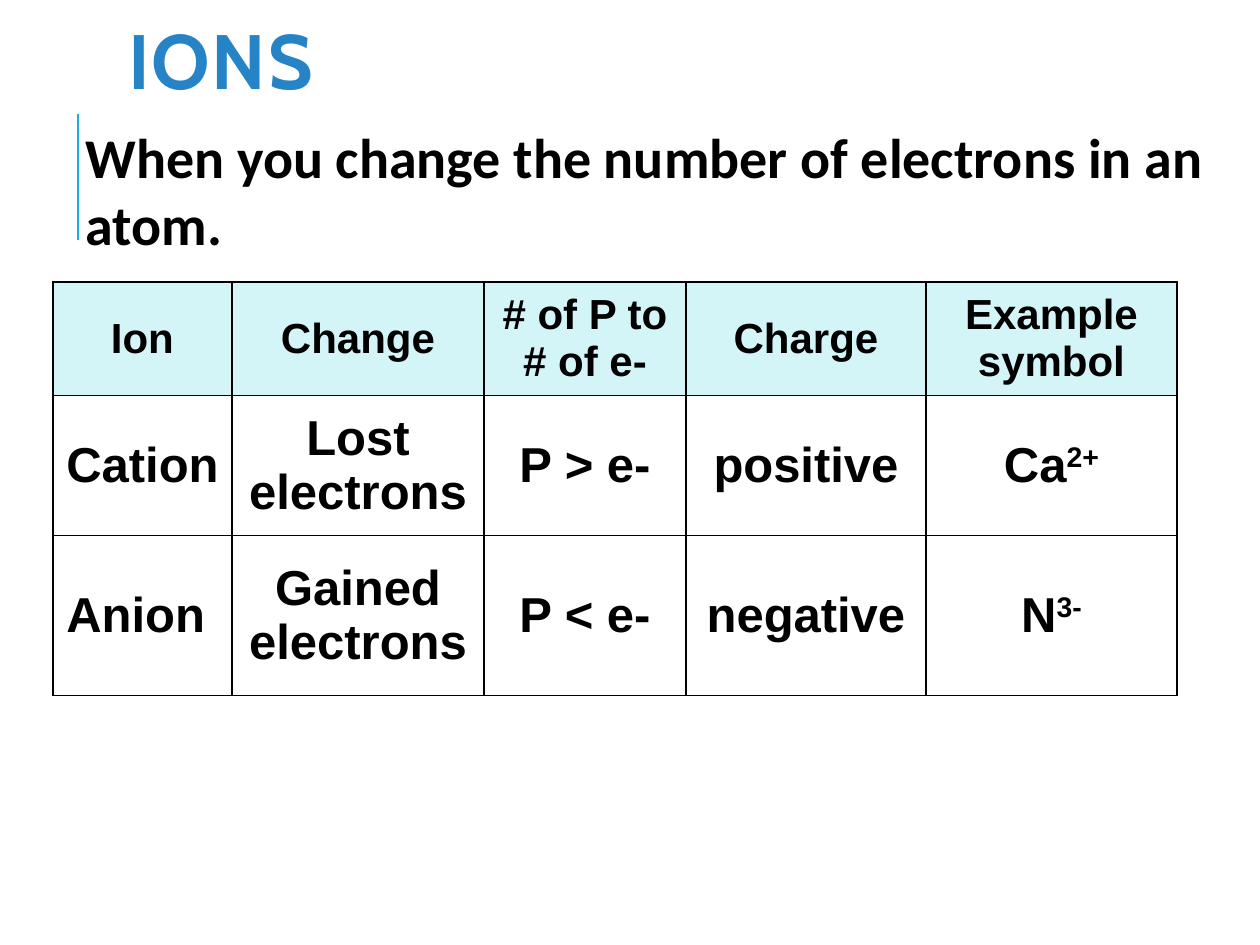
from lxml.etree import SubElement
from pptx import Presentation
from pptx.dml.color import RGBColor
from pptx.enum.shapes import MSO_CONNECTOR as Connector
from pptx.enum.text import MSO_ANCHOR as Anchor, PP_ALIGN as Align
from pptx.oxml.ns import qn
from pptx.util import Emu, Pt

PX = 914400 / 126
BLACK = RGBColor(0x00, 0x00, 0x00)
WHITE = RGBColor(0xFF, 0xFF, 0xFF)
TITLE_BLUE = RGBColor(0x26, 0x83, 0xC6)
ACCENT_BLUE = RGBColor(0x1C, 0xAD, 0xE4)
HEADER_FILL = RGBColor(0xD4, 0xF5, 0xF7)

COLUMN_WIDTHS = [179, 252, 202, 240, 251]
ROW_HEIGHTS = [113, 140, 160]
# A cell is its text, or its text with a superscript
ION_ROWS = [
    ["Ion", "Change", "# of P to # of e-", "Charge", "Example symbol"],
    ["Cation", "Lost electrons", "P > e-", "positive", ("Ca", "2+")],
    ["Anion ", "Gained electrons", "P < e-", "negative", ("N", "3-")],
]


def px(length):
    return Emu(round(length * PX))


class SlideBuilder:
    table_font = "Arial"
    header_size = 24
    body_size = 28

    def __init__(self, slide):
        self.slide = slide

    def style_run(self, run, font, size, color=BLACK):
        run.font.name = font
        run.font.size = Pt(size)
        run.font.bold = True
        run.font.color.rgb = color

    def text(self, box, words, font, size, color=BLACK,
             anchor=Anchor.TOP, line_spacing=1.0):
        frame = self.slide.shapes.add_textbox(*map(px, box)).text_frame
        frame.word_wrap = True
        frame.vertical_anchor = anchor
        frame.text = words
        paragraph = frame.paragraphs[0]
        paragraph.line_spacing = line_spacing
        self.style_run(paragraph.runs[0], font, size, color)
        return paragraph.runs[0]

    def line(self, start, end, color, width):
        rule = self.slide.shapes.add_connector(
            Connector.STRAIGHT, *map(px, start + end))
        rule.line.color.rgb = color
        rule.line.width = Pt(width)
        SubElement(rule._element.spPr, qn("a:effectLst"))

    def cell_borders(self, cell):
        properties = cell._tc.get_or_add_tcPr()
        for position, side in enumerate(("lnL", "lnR", "lnT", "lnB")):
            border = SubElement(properties, qn(f"a:{side}"), w=str(Pt(1)))
            fill = SubElement(border, qn("a:solidFill"))
            SubElement(fill, qn("a:srgbClr"), val=str(BLACK))
            properties.insert(position, border)

    def cell(self, cell, content, size, fill):
        base, superscript = content if isinstance(content, tuple) else (content, "")
        cell.fill.solid()
        cell.fill.fore_color.rgb = fill
        self.cell_borders(cell)
        cell.vertical_anchor = Anchor.MIDDLE
        paragraph = cell.text_frame.paragraphs[0]
        paragraph.text = base
        paragraph.alignment = Align.CENTER
        if superscript:
            raised = paragraph.add_run()
            raised.text = superscript
            raised.font._element.set("baseline", "30000")
        for run in paragraph.runs:
            self.style_run(run, self.table_font, size)

    def table(self, left, top, widths, heights, rows):
        box = (left, top, sum(widths), sum(heights))
        table = self.slide.shapes.add_table(
            len(rows), len(widths), *map(px, box)).table
        for column, width in zip(table.columns, widths):
            column.width = px(width)
        for row, height in zip(table.rows, heights):
            row.height = px(height)
        for r, contents in enumerate(rows):
            size, fill = ((self.body_size, WHITE) if r
                          else (self.header_size, HEADER_FILL))
            for c, content in enumerate(contents):
                self.cell(table.cell(r, c), content, size, fill)


def main():
    deck = Presentation()
    deck.slide_width, deck.slide_height = px(1260), px(945)
    builder = SlideBuilder(deck.slides.add_slide(deck.slide_layouts[6]))

    # Accent rule beside the definition
    builder.line((78, 240), (78, 114), ACCENT_BLUE, 1.5)

    # Title and definition
    title = builder.text((116, 31, 1061, 73), "IONS", "Cabin", 44, TITLE_BLUE,
                         Anchor.MIDDLE, 0.8)
    title.font._element.set("spc", "100")
    builder.text((73, 116, 1187, 149),
                 "When you change the number of electrons in an atom.",
                 "Calibri", 32)

    # Comparison of cations and anions
    builder.table(53, 282, COLUMN_WIDTHS, ROW_HEIGHTS, ION_ROWS)

    deck.save("out.pptx")


if __name__ == "__main__":
    main()
